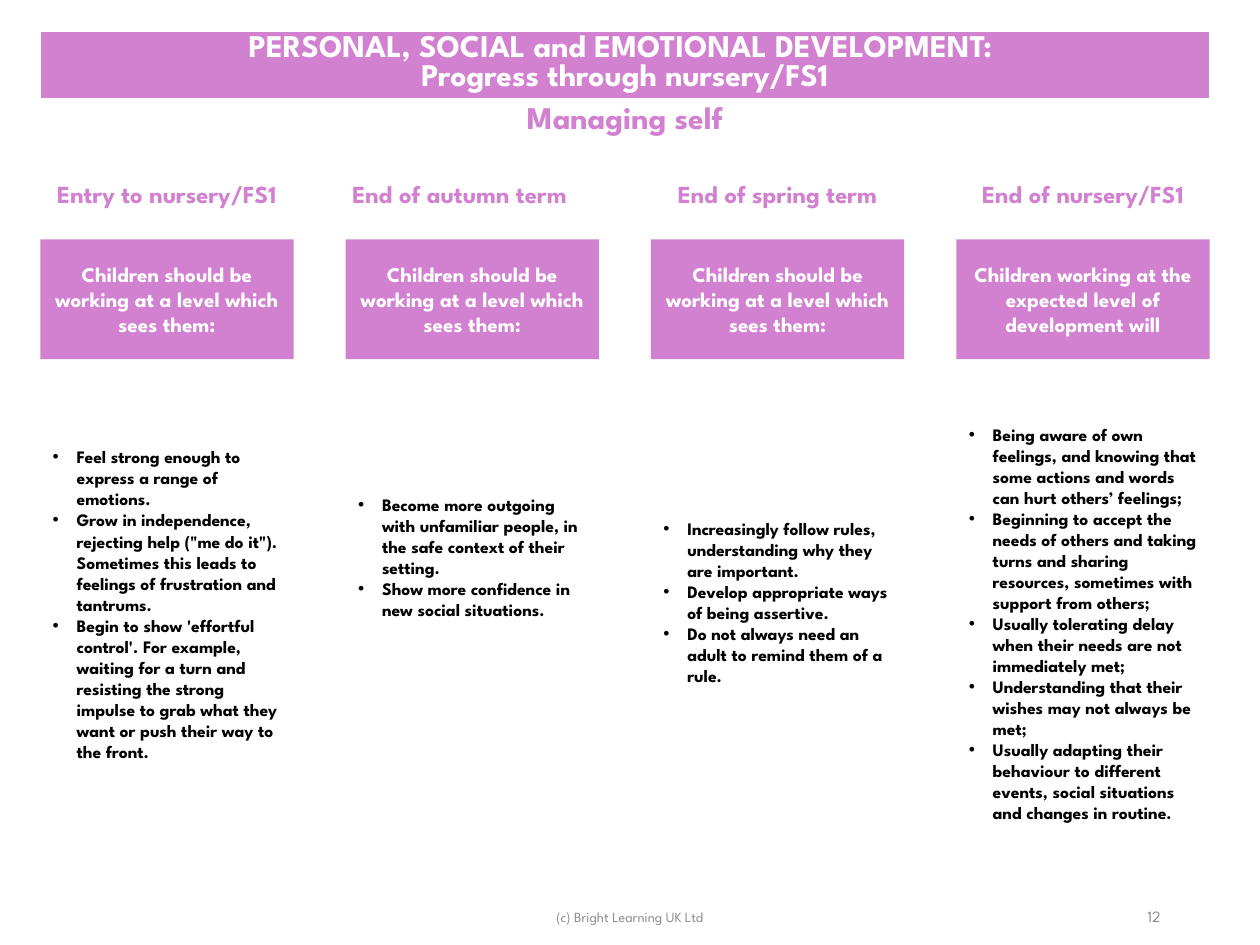
from lxml import etree
from pptx import Presentation
from pptx.dml.color import RGBColor
from pptx.enum.shapes import MSO_SHAPE
from pptx.enum.text import MSO_ANCHOR, PP_ALIGN
from pptx.oxml.ns import qn
from pptx.util import Inches, Pt

RECT = MSO_SHAPE.RECTANGLE
TOP, MIDDLE = MSO_ANCHOR.TOP, MSO_ANCHOR.MIDDLE
LEFT, CENTER, RIGHT = PP_ALIGN.LEFT, PP_ALIGN.CENTER, PP_ALIGN.RIGHT

FONT = "League Spartan"
PINK, WHITE, BLACK, GREY = "D280D0", "FFFFFF", "000000", "8C8C8C"
EDGE, WIDE = 0.32, 2.01
STEP = (7.59 - EDGE) / 3

LEVEL = "Children should be working at a level which sees them:"
# heading, heading left shift, box text, list top, list height, list items
TERMS = [
    ("Entry to nursery/FS1", 0, LEVEL, 3.18, 3.23, [
        "Feel strong enough to express a range of emotions.",
        "Grow in independence, rejecting help (\"me do it\"). Sometimes this "
        "leads to feelings of frustration and tantrums.",
        "Begin to show 'effortful control'. For example, waiting for a turn "
        "and resisting the strong impulse to grab what they want or push "
        "their way to the front.",
    ]),
    ("End of autumn term", 0.2, LEVEL, 3.03, 2.78, [
        "Become more outgoing with unfamiliar people, in the safe context of "
        "their setting.",
        "Show more confidence in new social situations.",
    ]),
    ("End of spring term", 0, LEVEL, 3.28, 3, [
        "Increasingly follow rules, understanding why they are important.",
        "Develop appropriate ways of being assertive.",
        "Do not always need an adult to remind them of a rule.",
    ]),
    # no-break spaces hold some word pairs together in this list
    ("End of nursery/FS1", 0,
     "Children working at the expected level of development will", 3.03, 3.84, [
         "Being aware of own feelings, and knowing that some actions and "
         "words can hurt others’ feelings;",
         "Beginning to accept the needs of others and taking turns and "
         "sharing resources, sometimes with support from others;",
         "Usually tolerating delay when their needs are not immediately met;",
         "Understanding that their wishes may not always be met;",
         "Usually adapting their behaviour to different events, social "
         "situations and changes in routine.",
     ]),
]


def color(code):
    return RGBColor.from_string(code)


def write(frame, lines, size=10, ink=BLACK, bold=True, align=LEFT,
          anchor=MIDDLE, bullet=False):
    frame.word_wrap = True
    frame.vertical_anchor = anchor
    for i, line in enumerate(lines):
        para = frame.add_paragraph() if i else frame.paragraphs[0]
        para.alignment = align
        run = para.add_run()
        run.text = line
        font = run.font
        font.name, font.size, font.bold = FONT, Pt(size), bold
        font.color.rgb = color(ink)
        if bullet:
            props = para._p.get_or_add_pPr()
            props.set("marL", str(Inches(0.19)))
            props.set("indent", str(-Inches(0.19)))
            etree.SubElement(props, qn("a:buFont"), typeface="Arial")
            etree.SubElement(props, qn("a:buChar"), char="•")


def border(cell, **widths):
    """Draw white cell borders; widths are points by side tag."""
    props = cell._tc.get_or_add_tcPr()
    for i, (side, width) in enumerate(widths.items()):
        line = etree.Element(qn("a:" + side), w=str(Pt(width)))
        fill = etree.SubElement(line, qn("a:solidFill"))
        etree.SubElement(fill, qn("a:srgbClr"), val=WHITE)
        props.insert(i, line)


class Page:
    def __init__(self, slide):
        self.slide = slide

    def text(self, x, y, w, h, lines, **style):
        box = self.slide.shapes.add_textbox(
            Inches(x), Inches(y), Inches(w), Inches(h))
        write(box.text_frame, lines, **style)

    def block(self, x, y, w, h, lines, **style):
        box = self.slide.shapes.add_shape(
            RECT, Inches(x), Inches(y), Inches(w), Inches(h))
        box.shadow.inherit = False
        box.fill.solid()
        box.fill.fore_color.rgb = color(PINK)
        box.line.fill.background()
        write(box.text_frame, lines, **style)

    def table(self, x, y, w, rows):
        """Stack one-column rows of (height, margin, fill, ink, lines)."""
        total = sum(row[0] for row in rows)
        grid = self.slide.shapes.add_table(
            len(rows), 1, Inches(x), Inches(y), Inches(w), Inches(total)).table
        for i, (high, gap, fill, ink, lines) in enumerate(rows):
            grid.rows[i].height = Inches(high)
            cell = grid.cell(i, 0)
            cell.margin_top = cell.margin_bottom = Inches(gap)
            if fill:
                cell.fill.solid()
                cell.fill.fore_color.rgb = color(fill)
            else:
                cell.fill.background()
            border(cell, lnL=1, lnR=1, lnT=1, lnB=1)
            write(cell.text_frame, lines, size=18, ink=ink, align=CENTER)
            cell.vertical_anchor = TOP


def main():
    deck = Presentation()
    deck.slide_width, deck.slide_height = Inches(10), Inches(7.5)
    page = Page(deck.slides.add_slide(deck.slide_layouts[6]))

    page.table(EDGE, 0.25, 9.28, [
        (0.53, 0.03, PINK, WHITE,
         ["PERSONAL, SOCIAL and EMOTIONAL DEVELOPMENT: ",
          "Progress through nursery/FS1"]),
        (0.41, 0.07, None, PINK, ["Managing self"]),
    ])

    for i, (head, shift, level, top, high, items) in enumerate(TERMS):
        x = EDGE + i * STEP
        page.text(x - shift, 1.37, WIDE + shift, 0.34, [head],
                  size=14, ink=PINK, align=CENTER, anchor=TOP)
        page.block(x, 1.9, WIDE, 0.95, [level],
                   size=12, ink=WHITE, align=CENTER)
        page.text(x, top, WIDE, high, items, bullet=True)

    page.text(3.31, 7.08, 3.38, 0.4, ["(c) Bright Learning UK Ltd"],
              size=8, ink=GREY, bold=False, align=CENTER)
    page.text(7.06, 7.07, 2.25, 0.4, ["12"],
              size=9, ink=GREY, bold=False, align=RIGHT)
    deck.save("out.pptx")


if __name__ == "__main__":
    main()
